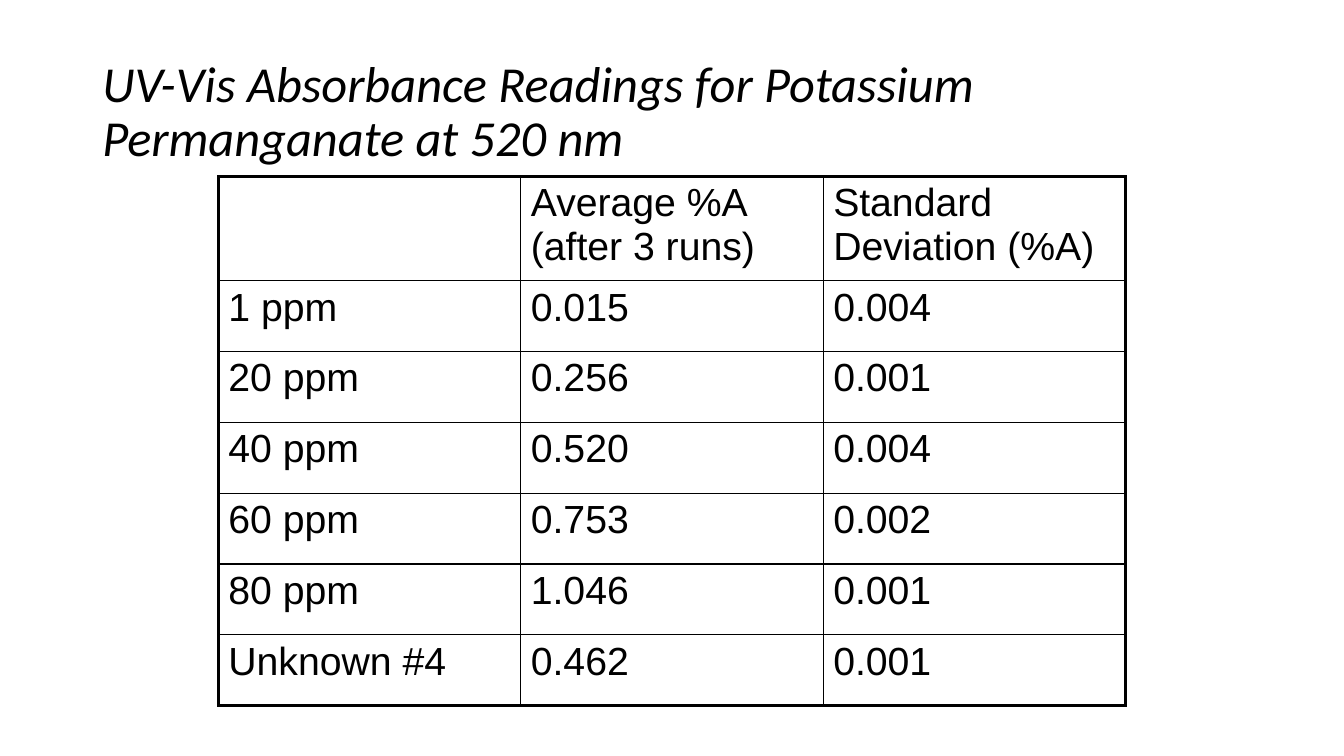
"""Build a slide with a table of UV-Vis absorbance readings."""
from dataclasses import dataclass

from lxml.etree import SubElement
from pptx import Presentation
from pptx.dml.color import RGBColor
from pptx.enum.text import MSO_ANCHOR as Anchor
from pptx.oxml.ns import qn
from pptx.slide import Slide
from pptx.table import _Cell as Cell
from pptx.text.text import _Paragraph as Paragraph
from pptx.util import Pt

BLACK = RGBColor(0, 0, 0)
TITLE_FONT = {"name": "Calibri", "size": Pt(36), "italic": True}
CELL_FONT = {"name": "Arial", "size": Pt(28), "italic": False}
INNER, OUTER = Pt(1), Pt(2.25)
COL_W, HEADER_H, ROW_H = 216, 74.4, 50.6


@dataclass(frozen=True)
class Reading:
    sample: str
    average: str
    deviation: str


READINGS = [
    Reading("", "Average %A (after 3 runs)", "Standard Deviation (%A)"),
    Reading("1 ppm", "0.015", "0.004"),
    Reading("20 ppm", "0.256", "0.001"),
    Reading("40 ppm", "0.520", "0.004"),
    Reading("60 ppm", "0.753", "0.002"),
    Reading("80 ppm", "1.046", "0.001"),
    Reading("Unknown #4", "0.462", "0.001"),
]


def format_font(p: Paragraph, values: dict) -> None:
    """Apply font values and black colour to a paragraph."""
    for name, value in values.items():
        setattr(p.font, name, value)
    p.font.color.rgb = BLACK


def add_title(s: Slide, text: str) -> None:
    """Add the slide title."""
    tf = s.shapes.add_textbox(Pt(66), Pt(28.8), Pt(828), Pt(104.4)).text_frame
    tf.word_wrap = True
    tf.vertical_anchor = Anchor.MIDDLE
    p = tf.paragraphs[0]
    p.line_spacing = 0.9
    r = p.add_run()
    r.text = text
    format_font(r, TITLE_FONT)


def set_borders(cell: Cell, outer: dict[str, bool]) -> None:
    """Draw the cell's sides, thicker on the table's outer edge."""
    tc_pr = cell._tc.get_or_add_tcPr()
    for side, is_outer in outer.items():
        ln = SubElement(tc_pr, qn(f"a:ln{side}"), w=str(OUTER if is_outer else INNER))
        SubElement(SubElement(ln, qn("a:solidFill")), qn("a:srgbClr"), val=str(BLACK))


def add_readings(s: Slide, readings: list[Reading]) -> None:
    """Add the table with one row per reading."""
    last = len(readings) - 1
    height = HEADER_H + last * ROW_H
    table = s.shapes.add_table(
        last + 1, 3, Pt(156), Pt(126), Pt(3 * COL_W), Pt(height)).table
    table.first_row = table.horz_banding = False
    for i, reading in enumerate(readings):
        table.rows[i].height = Pt(ROW_H if i else HEADER_H)
        texts = (reading.sample, reading.average, reading.deviation)
        for j, text in enumerate(texts):
            cell = table.cell(i, j)
            cell.text = text
            p = cell.text_frame.paragraphs[0]
            for part in p.runs or [p]:
                format_font(part, CELL_FONT)
            set_borders(cell, {"L": j == 0, "R": j == 2, "T": i == 0, "B": i == last})
            cell.fill.background()


def main() -> None:
    """Create and save the presentation."""
    prs = Presentation()
    prs.slide_width, prs.slide_height = Pt(960), Pt(540)
    s = prs.slides.add_slide(prs.slide_layouts[6])
    add_title(s, "UV-Vis Absorbance Readings for Potassium Permanganate at 520 nm")
    add_readings(s, READINGS)
    prs.save("out.pptx")


if __name__ == "__main__":
    main()
